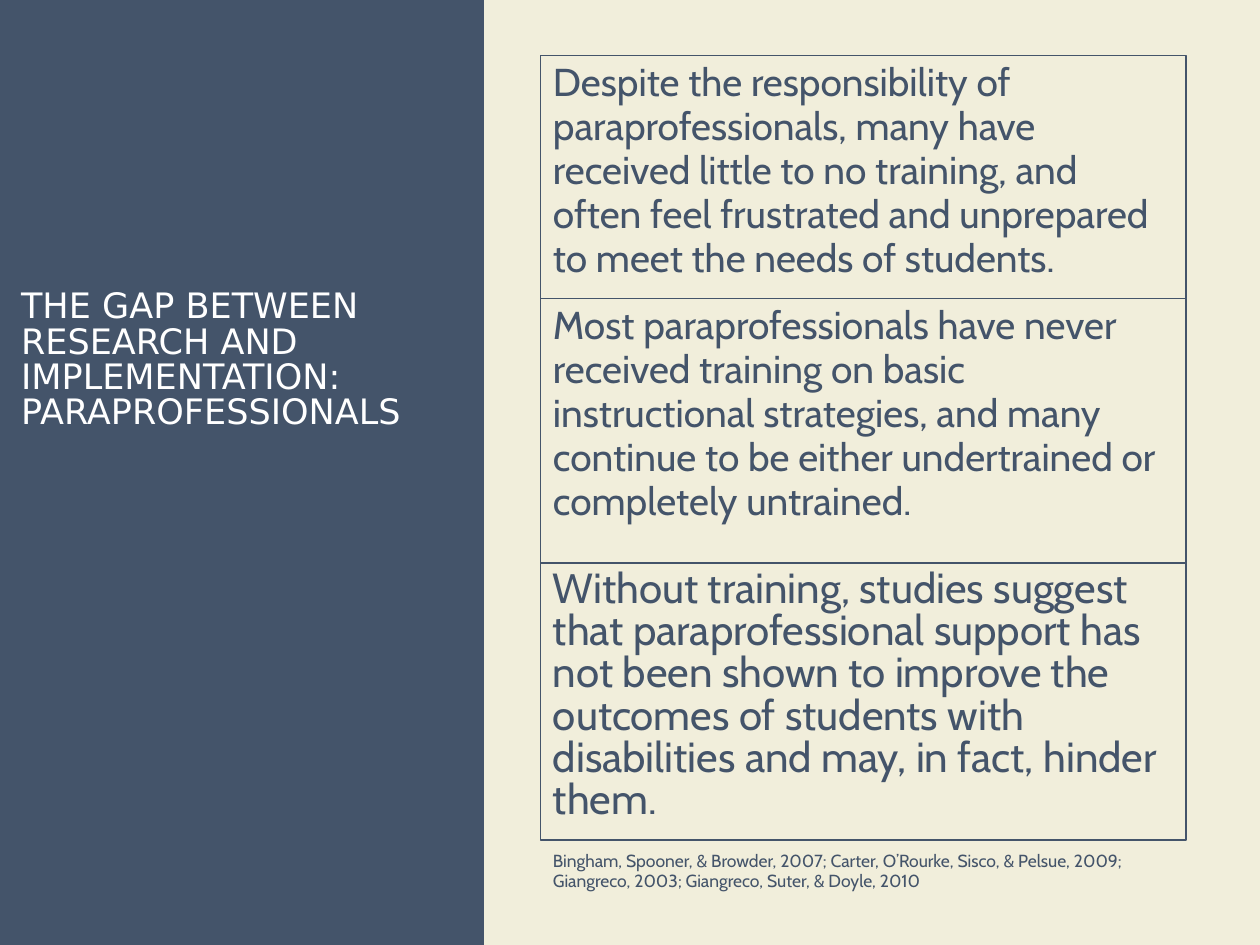
import pptx
import pptx.dml.color
import pptx.enum.shapes
import pptx.enum.text
import pptx.util

NAVY = pptx.dml.color.RGBColor(0x44, 0x54, 0x6A)
CREAM = pptx.dml.color.RGBColor(0xF1, 0xEE, 0xDB)
WHITE = pptx.dml.color.RGBColor(0xFF, 0xFF, 0xFF)

WIDTH = pptx.util.Inches(10)
HEIGHT = pptx.util.Inches(7.5)
PANEL_SHARE = 0.384
COLUMN_LEFT, COLUMN_TOP, COLUMN_WIDTH = 0.429, 0.44 / 7.5, 0.512
CITATION_GAP, CITATION_HEIGHT = 0.04 / 7.5, 0.04

TITLE = "THE GAP BETWEEN RESEARCH AND IMPLEMENTATION: PARAPROFESSIONALS"
STATEMENTS = [
    (1.93 / 7.5, 22.2, 0.94,
     "Despite the responsibility of paraprofessionals, many have received little to no "
     "training, and often feel frustrated and unprepared to meet the needs of students."),
    (2.1 / 7.5, 22.2, 0.94,
     "Most paraprofessionals have never received training on basic instructional "
     "strategies, and many continue to be either undertrained or completely untrained."),
    (2.2 / 7.5, 24, 0.84,
     "Without training, studies suggest that paraprofessional support has not been shown "
     "to improve the outcomes of students with disabilities and may, in fact, hinder them."),
]
CITATION = ("Bingham, Spooner, & Browder, 2007; Carter, O’Rourke, Sisco, & Pelsue, 2009; "
            "Giangreco, 2003; Giangreco, Suter, & Doyle, 2010")


def set_attributes(target, values):
    for name, value in values.items():
        setattr(target, name, value)


def to_lengths(box):
    left, top, width, height = box
    return [round(left * WIDTH), round(top * HEIGHT),
            round(width * WIDTH), round(height * HEIGHT)]


def add_rectangle(slide, box):
    shape = slide.shapes.add_shape(
        pptx.enum.shapes.MSO_SHAPE.RECTANGLE, *to_lengths(box))
    shape.shadow.inherit = False
    return shape


def write_text(shape, text, font_name, size, color, line_spacing):
    frame = shape.text_frame
    set_attributes(frame, {
        "word_wrap": True,
        "auto_size": pptx.enum.text.MSO_AUTO_SIZE.NONE,
        "vertical_anchor": pptx.enum.text.MSO_ANCHOR.TOP,
    })
    paragraph = frame.paragraphs[0]
    paragraph.text = text
    set_attributes(paragraph, {
        "alignment": pptx.enum.text.PP_ALIGN.LEFT,
        "line_spacing": line_spacing,
    })
    font = paragraph.runs[0].font
    set_attributes(font, {"name": font_name, "size": pptx.util.Pt(size)})
    font.color.rgb = color


def add_title_panel(slide, box):
    left, top, width, height = box
    panel = add_rectangle(slide, box)
    panel.fill.solid()
    panel.fill.fore_color.rgb = NAVY
    panel.line.fill.background()
    title_box = (left + 0.018 * width, top + 0.301 * height,
                 0.961 * width, 0.315 * height)
    title = slide.shapes.add_textbox(*to_lengths(title_box))
    write_text(title, TITLE, "DejaVu Sans", 20, WHITE, 0.84)


def add_statement(slide, box, text, size, line_spacing):
    shape = add_rectangle(slide, box)
    shape.fill.background()
    shape.line.color.rgb = NAVY
    shape.line.width = pptx.util.Pt(1)
    write_text(shape, text, "Cabin", size, NAVY, line_spacing)


def add_evidence_column(slide, left, top, width):
    for height, size, line_spacing, text in STATEMENTS:
        add_statement(slide, (left, top, width, height), text, size, line_spacing)
        top += height
    citation = slide.shapes.add_textbox(
        *to_lengths((left, top + CITATION_GAP, width, CITATION_HEIGHT)))
    write_text(citation, CITATION, "Cabin", 10, NAVY, 0.94)


def main():
    presentation = pptx.Presentation()
    set_attributes(presentation, {"slide_width": WIDTH, "slide_height": HEIGHT})
    slide = presentation.slides.add_slide(presentation.slide_layouts[6])
    slide.background.fill.solid()
    slide.background.fill.fore_color.rgb = CREAM
    add_title_panel(slide, (0, 0, PANEL_SHARE, 1))
    add_evidence_column(slide, COLUMN_LEFT, COLUMN_TOP, COLUMN_WIDTH)
    presentation.save("out.pptx")


if __name__ == "__main__":
    main()
